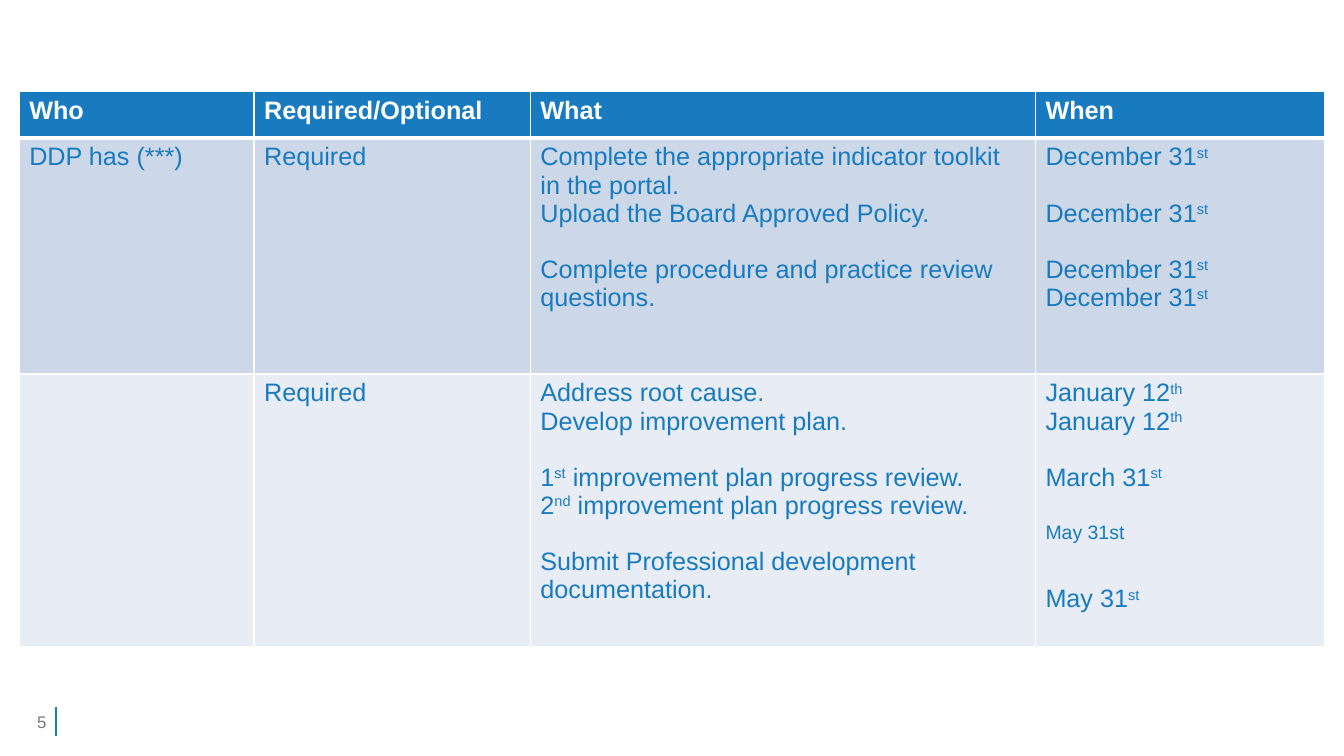
from pptx import Presentation
from pptx.dml.color import RGBColor
from pptx.enum.shapes import MSO_CONNECTOR
from pptx.enum.text import MSO_ANCHOR, PP_ALIGN
from pptx.oxml.ns import qn
from pptx.util import Inches, Pt
from lxml import etree

LINE = MSO_CONNECTOR.STRAIGHT
MIDDLE = MSO_ANCHOR.MIDDLE
RIGHT = PP_ALIGN.RIGHT

COLORS = {"blue": "187BC0", "white": "FFFFFF", "gray": "787878",
          "band": "CCD7E8", "pale": "E8ECF4"}
FILLS = ["blue", "band", "pale"]
COLS = [2.33, 2.74, 5.01, 2.87]
ROWS = [0.46, 2.34, 2.71]

# Text between carets is raised; an empty string opens a one-line gap
TASKS = [
    [["Who"], ["Required/Optional"], ["What"], ["When"]],
    [["DDP has (***)"], ["Required"],
     ["Complete the appropriate indicator toolkit in the portal.",
      "Upload the Board Approved Policy.", "",
      "Complete procedure and practice review questions."],
     ["December 31^st^", "", "December 31^st^", "",
      "December 31^st^", "December 31^st^"]],
    [[], ["Required"],
     ["Address root cause.", "Develop improvement plan.", "",
      "1^st^ improvement plan progress review.",
      "2^nd^ improvement plan progress review.", "",
      "Submit Professional development documentation."],
     ["January 12^th^", "January 12^th^", "", "March 31^st^", "",
      "^May 31st^", "", "May 31^st^"]],
]


def rgb(name):
    return RGBColor.from_string(COLORS[name])


def write(frame, lines, size=18, color="blue", bold=False, align=None):
    """Fill a text frame with one paragraph per line."""
    para, gap = None, False
    for line in lines:
        if not line:
            gap = True
            continue
        para = frame.add_paragraph() if para else frame.paragraphs[0]
        para.alignment = align
        if gap:
            para.space_before = Pt(20)
        gap = False
        for i, part in enumerate(line.split("^")):
            if not part:
                continue
            run = para.add_run()
            run.text = part
            font = run.font
            font.name, font.bold = "Arial", bold
            # A line that is raised throughout is set larger
            font.size = Pt(24 if line.startswith("^") else size)
            font.color.rgb = rgb(color)
            if i % 2:
                font._element.set("baseline", "30000")


class Page:
    def __init__(self, deck):
        self.slide = deck.slides.add_slide(deck.slide_layouts[6])
        self.shapes = self.slide.shapes

    def rule(self, x, top, end, color="blue", width=1.5):
        line = self.shapes.add_connector(
            LINE, Inches(x), Inches(top), Inches(x), Inches(end))
        line.line.color.rgb = rgb(color)
        line.line.width = Pt(width)
        etree.SubElement(line._element.spPr, qn("a:effectLst"))

    def text(self, lines, left, top, width, height, **style):
        box = self.shapes.add_textbox(
            Inches(left), Inches(top), Inches(width), Inches(height))
        frame = box.text_frame
        frame.word_wrap = True
        frame.vertical_anchor = MIDDLE
        write(frame, lines, **style)

    def edge(self, cell, side, width):
        props = cell._tc.get_or_add_tcPr()
        line = etree.SubElement(props, qn("a:ln" + side), w=str(Pt(width)))
        fill = etree.SubElement(line, qn("a:solidFill"))
        etree.SubElement(fill, qn("a:srgbClr"), val=COLORS["white"])

    def table(self, data, left, top):
        frame = self.shapes.add_table(
            len(ROWS), len(COLS), Inches(left), Inches(top),
            Inches(sum(COLS)), Inches(sum(ROWS)))
        grid = frame.table
        for col, width in zip(grid.columns, COLS):
            col.width = Inches(width)
        for r, row in enumerate(data):
            grid.rows[r].height = Inches(ROWS[r])
            head = r == 0
            for c, lines in enumerate(row):
                cell = grid.cell(r, c)
                for side in "LRTB":
                    thick = (r, side) in [(0, "B"), (1, "T")]
                    self.edge(cell, side, 3 if thick else 1)
                cell.fill.solid()
                cell.fill.fore_color.rgb = rgb(FILLS[r])
                write(cell.text_frame, lines, bold=head,
                      color="white" if head else "blue")


def main():
    deck = Presentation()
    deck.slide_width, deck.slide_height = Inches(13.33), Inches(7.5)
    page = Page(deck)

    # Footer rule, task table and page number
    page.rule(0.56, 7.01, 7.3)
    page.table(TASKS, 0.19, 0.91)
    page.text(["5"], 0, 6.96, 0.56, 0.4, size=12, color="gray", align=RIGHT)

    deck.save("out.pptx")


if __name__ == "__main__":
    main()
